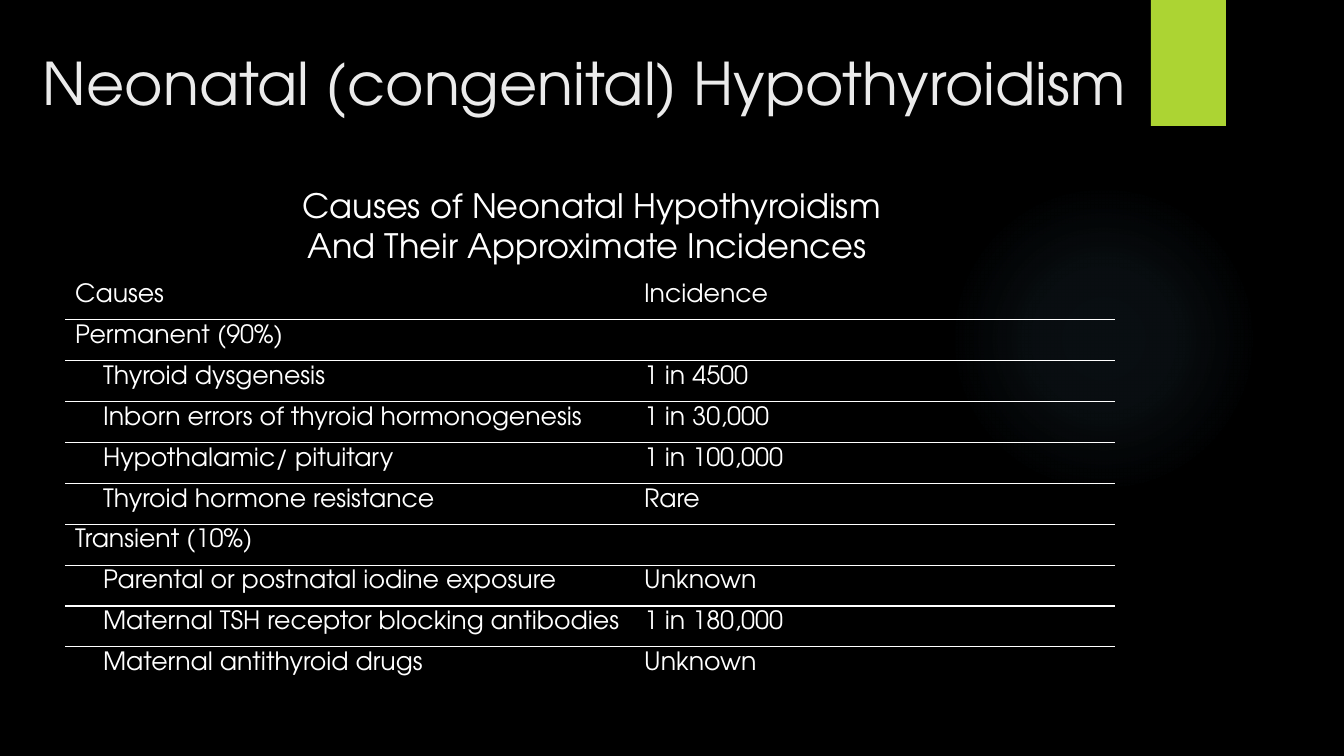
from lxml.etree import fromstring
from pptx import Presentation
from pptx.dml.color import RGBColor as Rgb
from pptx.enum.shapes import MSO_SHAPE as Shape
from pptx.enum.text import MSO_ANCHOR as Anchor, PP_ALIGN as Align
from pptx.oxml.ns import qn
from pptx.util import Pt

SCALE = 12192000 / 1344
FONT = "TeX Gyre Adventor"
INK = {"black": "000000", "white": "FFFFFF", "pale": "EBEBEB",
       "lime": "ACD433", "sky": "7AC4F0"}
SPACE = 'xmlns:a="http://schemas.openxmlformats.org/drawingml/2006/main"'
PLAIN = "{2D5ABB26-0587-4C30-8999-92F81FD0307C}"
CAUSES = [
    (0, "Causes", "Incidence"),
    (0, "Permanent (90%)", ""),
    (1, "Thyroid dysgenesis", "1 in 4500"),
    (1, "Inborn errors of thyroid hormonogenesis", "1 in 30,000"),
    (1, "Hypothalamic/ pituitary", "1 in 100,000"),
    (1, "Thyroid hormone resistance", "Rare"),
    (0, "Transient (10%)", ""),
    (1, "Parental or postnatal iodine exposure", "Unknown"),
    (1, "Maternal TSH receptor blocking antibodies", "1 in 180,000"),
    (1, "Maternal antithyroid drugs", "Unknown"),
]


def px(n):
    return round(n * SCALE)


class Deck:
    def __init__(self, wide, high):
        self.file = Presentation()
        self.file.slide_width, self.file.slide_height = px(wide), px(high)
        self.slide = self.file.slides.add_slide(self.file.slide_layouts[6])
        back = self.slide.background.fill
        back.solid()
        back.fore_color.rgb = Rgb.from_string(INK["black"])

    def shape(self, kind, box, ink):
        item = self.slide.shapes.add_shape(kind, *map(px, box))
        item.shadow.inherit = False
        item.fill.solid()
        item.fill.fore_color.rgb = Rgb.from_string(INK[ink])
        item.line.fill.background()
        return item

    def glow(self, box, ink, stops):
        item = self.shape(Shape.OVAL, box, ink)
        marks = "".join(
            f'<a:gs pos="{pos}000"><a:srgbClr val="{INK[ink]}">'
            f'<a:alpha val="{part}000"/></a:srgbClr></a:gs>'
            for pos, part in stops)
        solid = item._element.spPr.find(qn("a:solidFill"))
        solid.getparent().replace(solid, fromstring(
            f'<a:gradFill {SPACE}><a:gsLst>{marks}</a:gsLst>'
            '<a:path path="circle"><a:fillToRect l="50000" t="50000" '
            'r="50000" b="50000"/></a:path></a:gradFill>'))

    def run(self, para, words, size, ink, align=Align.LEFT):
        para.alignment = align
        run = para.add_run()
        run.text = words
        run.font.name, run.font.size = FONT, Pt(size)
        run.font.color.rgb = Rgb.from_string(INK[ink])

    def text(self, box, lines, size, ink, align=Align.LEFT):
        frame = self.slide.shapes.add_textbox(*map(px, box)).text_frame
        frame.word_wrap = True
        frame.vertical_anchor = Anchor.TOP
        for i, line in enumerate(lines):
            para = frame.add_paragraph() if i else frame.paragraphs[0]
            self.run(para, line, size, ink, align)

    def rule(self, cell, tag):
        cell._tc.get_or_add_tcPr().insert(0, fromstring(
            f'<a:{tag} {SPACE} w="12700"><a:solidFill>'
            f'<a:srgbClr val="{INK["white"]}"/></a:solidFill></a:{tag}>'))

    def table(self, box, cols, rows, size, ink, step):
        grid = self.slide.shapes.add_table(
            len(rows), len(cols), *map(px, box)).table
        grid._tbl.tblPr.find(qn("a:tableStyleId")).text = PLAIN
        grid.horz_banding = grid.first_row = False
        for col, wide in zip(grid.columns, cols):
            col.width = px(wide)
        for i, (level, *words) in enumerate(rows):
            grid.rows[i].height = px(box[3] / len(rows))
            for j, word in enumerate(words):
                cell = grid.cell(i, j)
                cell.fill.background()
                if i < len(rows) - 1:
                    self.rule(cell, "lnB")
                if i:
                    self.rule(cell, "lnT")
                para = cell.text_frame.paragraphs[0]
                if level and not j:
                    para._p.get_or_add_pPr().set("marL", str(px(step)))
                if word:
                    self.run(para, word, size, ink)
                else:
                    para.font.size = Pt(size)


def main():
    deck = Deck(1344, 756)
    deck.glow((949, 184, 310, 310), "sky", [(0, 7), (36, 6), (69, 0)])
    deck.shape(Shape.RECTANGLE, (1151, 0, 75, 126), "lime")
    deck.text((33, 42, 1114, 154),
              ["Neonatal (congenital) Hypothyroidism"], 42, "pale")
    deck.table((65, 279, 1050, 409), (569, 481), CAUSES, 18, "white", 28)
    deck.text((228, 180, 727, 92),
              ["Causes of Neonatal Hypothyroidism",
               "And Their Approximate Incidences "],
              24, "white", Align.CENTER)
    deck.file.save("out.pptx")


if __name__ == "__main__":
    main()
